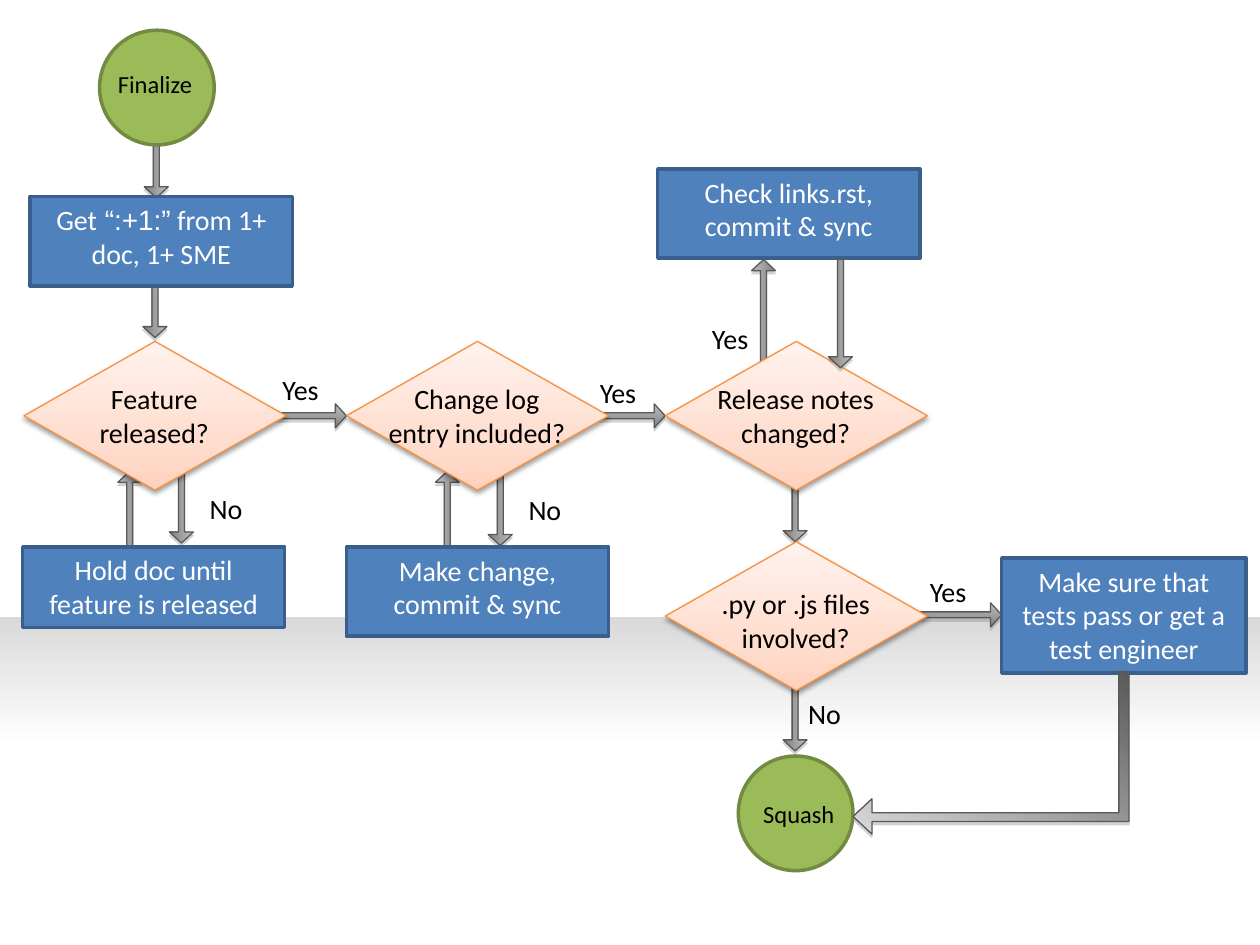
from math import atan2, degrees, hypot

from lxml.etree import SubElement
from pptx import Presentation
from pptx.dml.color import RGBColor
from pptx.enum.shapes import MSO_SHAPE
from pptx.enum.text import MSO_ANCHOR, PP_ALIGN
from pptx.oxml.ns import qn
from pptx.util import Inches, Pt

WIDTH, HEIGHT = 10, 7.5
BLACK = RGBColor(0x00, 0x00, 0x00)
WHITE = RGBColor(0xFF, 0xFF, 0xFF)
BLUE = RGBColor(0x4F, 0x81, 0xBD)
NAVY = RGBColor(0x3A, 0x5F, 0x8C)
GREEN = RGBColor(0x9B, 0xBB, 0x59)
OLIVE = RGBColor(0x73, 0x8A, 0x42)
ORANGE = RGBColor(0xF6, 0x92, 0x40)
GRAY = RGBColor(0x80, 0x80, 0x80)
PALE_GRAY = RGBColor(0xD9, 0xD9, 0xD9)
DARK_GRAY = RGBColor(0x59, 0x59, 0x59)

# Gradients: stops as (percent, colour), then the clockwise angle
FLOOR = [(0, WHITE), (61, WHITE), (100, PALE_GRAY)], 270
STEEL = [(0, RGBColor(0xBF, 0xBF, 0xBF)), (100, RGBColor(0x7F, 0x7F, 0x7F))], 90
PEACH = [(0, RGBColor(0xFF, 0xD2, 0xBD)), (35, RGBColor(0xFF, 0xDE, 0xD0)),
         (100, RGBColor(0xFF, 0xF2, 0xED))], 270
RETURN = [(0, DARK_GRAY), (100, PALE_GRAY)], 120

# Shadows: colour, opacity percent, blur and distance in points
ARROW_SHADOW = GRAY, 35, 0, 1.8
DIAMOND_SHADOW = BLACK, 38, 3.1, 1.6

COLUMNS = [0.19, 2.75, 5.28]
ROWS = [2.71, 4.3]
DIAMOND_SIZE = 2.08, 1.18
CIRCLE = 0.91
ARROW_WIDTH = 0.19

# Column, row, wording, offset of the wording below the diamond's top
DECISIONS = [
    (0, 0, "Feature released?", 0.27),
    (1, 0, "Change log entry included?", 0.27),
    (2, 0, "Release notes changed?", 0.27),
    (2, 1, ".py or .js files involved?", 0.31),
]
# Left, top, width, height, runs of wording with their fonts
STEPS = [
    (0.24, 1.56, 2.08, 0.71, [("Get", "Calibri"), (" “:+1:”", "Arial"),
                              (" from 1+ doc, 1+ SME", "Calibri")]),
    (0.18, 4.34, 2.08, 0.64, [("Hold doc until feature is released", "Calibri")]),
    (2.75, 4.34, 2.08, 0.71, [("Make change, commit & sync", "Calibri")]),
    (5.22, 1.34, 2.08, 0.71, [("Check links.rst, commit & sync", "Calibri")]),
    (7.95, 4.43, 1.94, 0.91,
     [("Make sure that tests pass or get a test engineer", "Calibri")]),
]
# Circle left and top, wording, wording left and top
TERMINALS = [
    (0.79, 0.24, "Finalize", 0.72, 0.5),
    (5.86, 6.0, "Squash", 5.83, 6.29),
]
ANSWERS = [
    ("Yes", 2.12, 2.91), ("No", 1.53, 3.85), ("Yes", 4.64, 2.93), ("No", 4.06, 3.86),
    ("Yes", 5.53, 2.5), ("Yes", 7.26, 4.51), ("No", 6.28, 5.48),
]
# Tail and head of each arrow
ARROWS_BEHIND = [
    ((6.31, 3.44), (6.31, 4.3)), ((7.09, 4.88), (7.95, 4.88)),
    ((3.55, 4.42), (3.55, 3.74)), ((1.03, 4.42), (1.03, 3.74)),
    ((1.44, 3.63), (1.44, 4.31)), ((1.24, 1.15), (1.24, 1.57)),
    ((1.89, 3.3), (2.75, 3.3)), ((1.23, 2.27), (1.23, 2.68)),
    ((3.97, 3.65), (3.97, 4.33)), ((4.42, 3.3), (5.28, 3.3)),
    ((6.06, 2.92), (6.06, 2.06)), ((6.31, 5.28), (6.31, 5.96)),
]
ARROWS_IN_FRONT = [((6.67, 2.06), (6.67, 2.92))]
RETURN_ARROW = [(8.88, 5.33), (8.88, 6.45), (6.92, 6.45), (6.92, 6.34), (6.77, 6.48),
                (6.92, 6.62), (6.92, 6.52), (8.96, 6.52), (8.96, 5.33)]


def add_color(parent, color, opacity=100):
    node = SubElement(parent, qn("a:srgbClr"), val=str(color))
    if opacity < 100:
        SubElement(node, qn("a:alpha"), val=str(opacity * 1000))


def fill_gradient(shape, stops, angle):
    shape.fill.gradient()
    gradient = shape._element.spPr.find(qn("a:gradFill"))
    for child in list(gradient):
        gradient.remove(child)
    stop_list = SubElement(gradient, qn("a:gsLst"))
    for percent, color in stops:
        add_color(SubElement(stop_list, qn("a:gs"), pos=str(percent * 1000)), color)
    SubElement(gradient, qn("a:lin"), ang=str(angle * 60000), scaled="0")


def decorate(shape, fill, line=None, line_width=0.75, shadow=None):
    if isinstance(fill, RGBColor):
        shape.fill.solid()
        shape.fill.fore_color.rgb = fill
    else:
        fill_gradient(shape, *fill)
    if line is None:
        shape.line.fill.background()
    else:
        shape.line.color.rgb = line
        shape.line.width = Pt(line_width)
    shape.shadow.inherit = False
    if shadow:
        color, opacity, blur, distance = shadow
        effects = shape._element.spPr.find(qn("a:effectLst"))
        outer = SubElement(effects, qn("a:outerShdw"), blurRad=str(Pt(blur)),
                           dist=str(Pt(distance)), dir="5400000", rotWithShape="0")
        add_color(outer, color, opacity)


def add_shape(page, kind, left, top, width, height, **look):
    shape = page.shapes.add_shape(kind, *map(Inches, (left, top, width, height)))
    decorate(shape, **look)
    return shape


def write(shape, runs, size=16, color=BLACK):
    frame = shape.text_frame
    frame.word_wrap = True
    frame.vertical_anchor = MSO_ANCHOR.TOP
    para = frame.paragraphs[0]
    para.alignment = PP_ALIGN.CENTER
    for text, font in runs:
        span = para.add_run()
        span.text = text
        span.font.name = font
        span.font.size = Pt(size)
        span.font.color.rgb = color


def add_label(page, text, left, top, width, height, **style):
    box = page.shapes.add_textbox(*map(Inches, (left, top, width, height)))
    write(box, [(text, "Calibri")], **style)


def add_arrow(page, tail, head):
    """Place a block arrow, turned about its middle, from tail to head."""
    run, drop = head[0] - tail[0], head[1] - tail[1]
    length = hypot(run, drop)
    left = (tail[0] + head[0] - length) / 2
    top = (tail[1] + head[1] - ARROW_WIDTH) / 2
    arrow = add_shape(page, MSO_SHAPE.RIGHT_ARROW, left, top, length, ARROW_WIDTH,
                      fill=STEEL, line=DARK_GRAY, shadow=ARROW_SHADOW)
    arrow.rotation = degrees(atan2(drop, run)) % 360
    arrow.adjustments[0], arrow.adjustments[1] = 0.25, 0.46


def add_return_arrow(page):
    first, *others = [(Inches(x), Inches(y)) for x, y in RETURN_ARROW]
    builder = page.shapes.build_freeform(*first)
    builder.add_line_segments(others, close=True)
    decorate(builder.convert_to_shape(), fill=RETURN, line=DARK_GRAY, shadow=ARROW_SHADOW)


def main():
    deck = Presentation()
    deck.slide_width, deck.slide_height = Inches(WIDTH), Inches(HEIGHT)
    page = deck.slides.add_slide(deck.slide_layouts[6])
    add_shape(page, MSO_SHAPE.RECTANGLE, 0, 4.9, WIDTH, HEIGHT - 4.9, fill=FLOOR)

    for tail, head in ARROWS_BEHIND:
        add_arrow(page, tail, head)
    for column, row, text, offset in DECISIONS:
        left, top = COLUMNS[column], ROWS[row]
        add_shape(page, MSO_SHAPE.DIAMOND, left, top, *DIAMOND_SIZE,
                  fill=PEACH, line=ORANGE, shadow=DIAMOND_SHADOW)
        add_label(page, text, left + 0.2, top + offset, 1.67, 0.64)
    for left, top, width, height, runs in STEPS:
        step = add_shape(page, MSO_SHAPE.RECTANGLE, left, top, width, height,
                         fill=BLUE, line=NAVY, line_width=2)
        write(step, runs, color=WHITE)
    for left, top, text, text_left, text_top in TERMINALS:
        add_shape(page, MSO_SHAPE.OVAL, left, top, CIRCLE, CIRCLE,
                  fill=GREEN, line=OLIVE, line_width=2)
        add_label(page, text, text_left, text_top, 1.02, 0.34, size=14)
    for text, left, top in ANSWERS:
        add_label(page, text, left, top, 0.53, 0.37)
    for tail, head in ARROWS_IN_FRONT:
        add_arrow(page, tail, head)
    add_return_arrow(page)
    deck.save("out.pptx")


if __name__ == "__main__":
    main()
